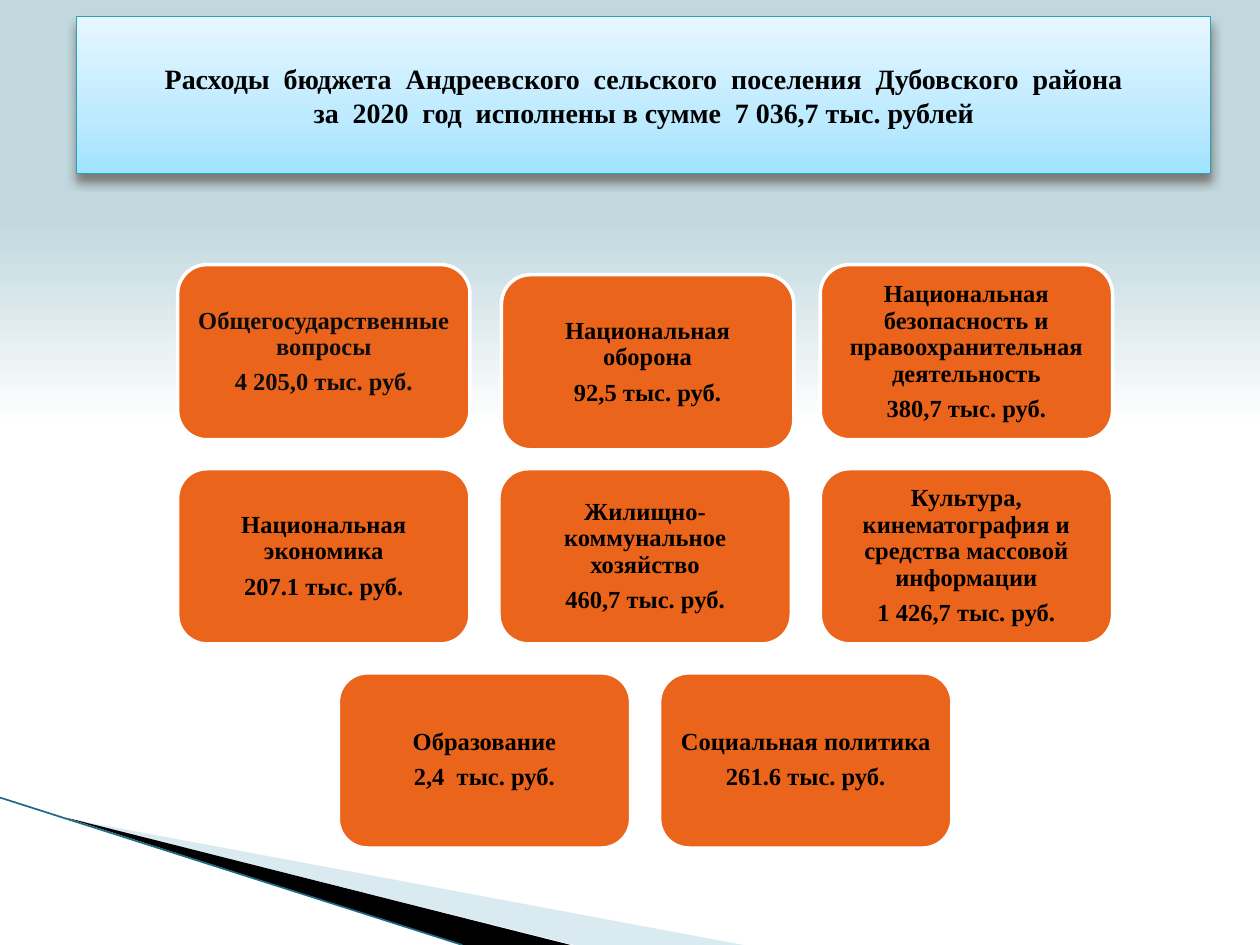
"""Builds a slide of municipal budget expenditure by category."""
import pptx
import pptx.dml.color
import pptx.enum.shapes
import pptx.enum.text
import pptx.oxml
import pptx.oxml.ns
import pptx.util

Inches, Pt = pptx.util.Inches, pptx.util.Pt
RGB = pptx.dml.color.RGBColor.from_string
SHAPE = pptx.enum.shapes.MSO_SHAPE
qn, nsdecls = pptx.oxml.ns.qn, pptx.oxml.ns.nsdecls

THEME = {
    "font": "Times New Roman", "title_size": 16, "card_size": 14,
    "text": "000000", "soft_text": "0D0D0D", "card": "EB641B", "card_line": "FFFFFF",
    "title_line": "28A1BE", "shadow": "4E3B30",
    "title_stops": [(0, "E6F7FF"), (65, "BDEAFF"), (100, "A1E3FF")],
    "sky_stops": [(0, "C0D8DE"), (23, "C0D8DE"), (45, "FFFFFF"), (100, "FFFFFF")],
    "pale_wedge": "A0CBDC", "dark_wedge": "000000", "edge": "1A6C82",
}


def set_gradient(fill, element, stops):
    fill.gradient()
    fill.gradient_angle = 270
    stop_list = next(element.iter(qn("a:gsLst")))
    stop_list.clear()
    for position, color in stops:
        stop_list.append(pptx.oxml.parse_xml(
            f'<a:gs {nsdecls("a")} pos="{position * 1000}"><a:srgbClr val="{color}"/></a:gs>'))


def write_text(sp, lines, size, color, inset, paragraph_format):
    tf = sp.text_frame
    frame_format = {"word_wrap": True, "vertical_anchor": pptx.enum.text.MSO_ANCHOR.MIDDLE}
    frame_format.update({f"margin_{side}": Inches(inset) for side in ("left", "right", "top", "bottom")})
    for name, value in frame_format.items():
        setattr(tf, name, value)
    for i, line in enumerate(lines):
        p = tf.add_paragraph() if i else tf.paragraphs[0]
        p.text = line
        for name, value in paragraph_format.items():
            setattr(p, name, value)
        for r in p.runs:
            for name, value in {"name": THEME["font"], "size": Pt(size), "bold": True}.items():
                setattr(r.font, name, value)
            r.font.color.rgb = RGB(color)


prs = pptx.Presentation()
prs.slide_width, prs.slide_height = Inches(10), Inches(7.5)
s = prs.slides.add_slide(prs.slide_layouts[6])
set_gradient(s.background.fill, s.element, THEME["sky_stops"])

wedges = [
    ("pale_wedge", 40, [(0.55, 6.5), (5.9, 7.5), (4.56, 7.5)]),
    ("dark_wedge", 100, [(0.53, 6.49), (4.53, 7.5), (3.67, 7.5)]),
]
for color, opacity, points in wedges:
    corners = [(Inches(x), Inches(y)) for x, y in points]
    builder = s.shapes.build_freeform(*corners[0])
    builder.add_line_segments(corners[1:])
    sp = builder.convert_to_shape()
    sp.shadow.inherit = False
    sp.fill.solid()
    sp.fill.fore_color.rgb = RGB(THEME[color])
    sp.line.fill.background()
    if opacity < 100:
        next(sp.element.iter(qn("a:srgbClr"))).append(
            pptx.oxml.parse_xml(f'<a:alpha {nsdecls("a")} val="{opacity * 1000}"/>'))

edge = s.shapes.add_connector(pptx.enum.shapes.MSO_CONNECTOR.STRAIGHT,
                              Inches(0), Inches(6.33), Inches(3.67), Inches(7.5))
edge.line.color.rgb = RGB(THEME["edge"])
edge.line.width = Pt(0.95)
edge.element.spPr.append(pptx.oxml.parse_xml(f'<a:effectLst {nsdecls("a")}/>'))

title = s.shapes.add_shape(SHAPE.RECTANGLE, Inches(0.61), Inches(0.13), Inches(9), Inches(1.25))
title.shadow.inherit = False
set_gradient(title.fill, title.element, THEME["title_stops"])
title.line.color.rgb = RGB(THEME["title_line"])
title.line.width = Pt(0.75)
next(title.element.iter(qn("a:effectLst"))).append(pptx.oxml.parse_xml(
    f'<a:outerShdw {nsdecls("a")} blurRad="{Pt(6)}" dist="{Pt(4)}" dir="5400000" rotWithShape="0">'
    f'<a:srgbClr val="{THEME["shadow"]}"><a:alpha val="60000"/></a:srgbClr></a:outerShdw>'))
centered = {"alignment": pptx.enum.text.PP_ALIGN.CENTER}
write_text(title, ["Расходы  бюджета  Андреевского  сельского  поселения  Дубовского  района\v"
                   "за  2020  год  исполнены в сумме  7 036,7 тыс. рублей"],
           THEME["title_size"], THEME["text"], 0.05, centered)

card_rows = [
    [("Общегосударственные вопросы", "4 205,0 тыс. руб."),
     ("Национальная оборона", "92,5 тыс. руб."),
     ("Национальная безопасность и правоохранительная деятельность", "380,7 тыс. руб.")],
    [("Национальная экономика", "207.1 тыс. руб."),
     ("Жилищно-коммунальное хозяйство", "460,7 тыс. руб."),
     ("Культура, кинематография и средства массовой информации", "1 426,7 тыс. руб.")],
    [("Образование", "2,4  тыс. руб."),
     ("Социальная политика", "261.6 тыс. руб.")],
]
card_width, card_height, gap, center = 2.32, 1.39, 0.23, 5.12
nudges = {(0, 1): (0.02, 0.08)}
outlines = {(2, 0): SHAPE.ROUNDED_RECTANGLE}
text_colors = {(0, 0): THEME["soft_text"]}
card_format = {**centered, "line_spacing": 0.9, "space_after": Pt(5)}

for row, cards in enumerate(card_rows):
    row_left = center - (len(cards) * (card_width + gap) - gap) / 2
    for col, lines in enumerate(cards):
        key = (row, col)
        dx, dy = nudges.get(key, (0, 0))
        left = row_left + col * (card_width + gap) + dx
        top = 2.1 + row * (card_height + gap) + dy
        sp = s.shapes.add_shape(outlines.get(key, SHAPE.FLOWCHART_ALTERNATE_PROCESS),
                                Inches(left), Inches(top), Inches(card_width), Inches(card_height))
        sp.shadow.inherit = False
        sp.fill.solid()
        sp.fill.fore_color.rgb = RGB(THEME["card"])
        sp.line.color.rgb = RGB(THEME["card_line"])
        sp.line.width = Pt(2)
        write_text(sp, lines, THEME["card_size"], text_colors.get(key, THEME["text"]), 0.06, card_format)

prs.save("out.pptx")
